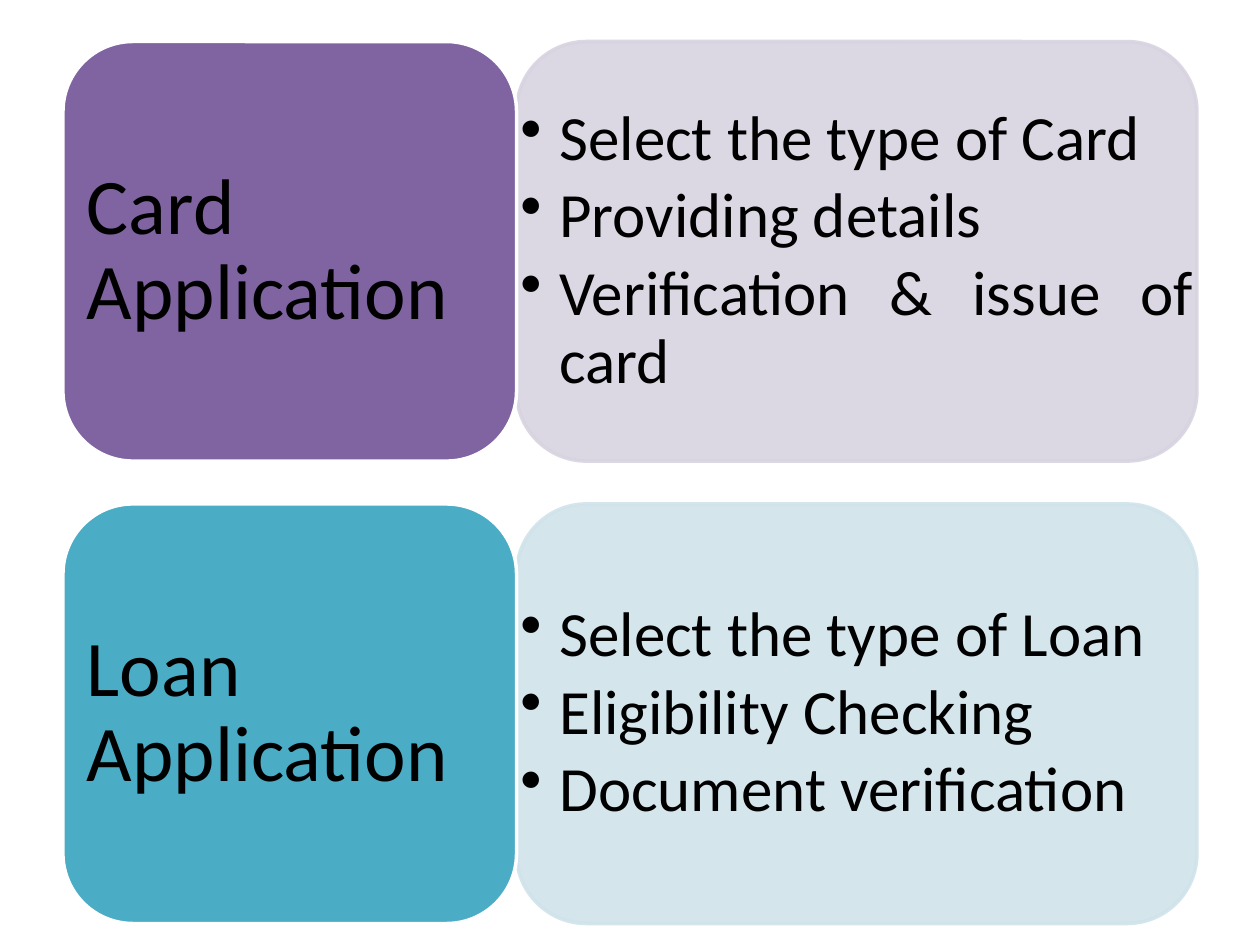
import pptx
import pptx.util
from lxml import etree
from pptx.dml.color import RGBColor
from pptx.enum.shapes import MSO_SHAPE
from pptx.enum.text import MSO_ANCHOR, PP_ALIGN
from pptx.oxml.ns import qn
from pptx.util import Inches

COLORS = {
    "text": "000000", "white": "FFFFFF",
    "card": "8064A2", "card_pale": "D8D3E0",
    "loan": "4BACC6", "loan_pale": "D0E3EA",
}
ROWS = [
    ("card", "Card Application",
     ["Select the type of Card", "Providing details", "Verification & issue of card"]),
    ("loan", "Loan Application",
     ["Select the type of Loan", "Eligibility Checking", "Document verification"]),
]
LEFT, TOP, ROW_H, ROW_STEP = 0.5, 0.33, 3.33, 3.67
TITLE_W, DETAIL_W = 3.6, 5.4
TITLE = {"size": 45, "after": 0.35, "insets": (0.19, 0.09), "bullet": False}
DETAIL = {"size": 36, "after": 0.15, "insets": (0.03, 0.03), "bullet": True}


def rgb(name):
    return RGBColor.from_string(COLORS[name])


def set_alpha(fill_parent, percent):
    for clr in fill_parent.iter(qn("a:srgbClr")):
        etree.SubElement(clr, qn("a:alpha"), val=str(percent * 1000))


def add_panel(s, kind, box, fill, line, alpha=None):
    sp = s.shapes.add_shape(kind, *map(Inches, box))
    sp.shadow.inherit = False
    sp.fill.solid()
    sp.fill.fore_color.rgb = rgb(fill)
    sp.line.color.rgb = rgb(line)
    sp.line.width = pptx.util.Pt(2)
    if alpha:
        set_alpha(sp.element.spPr, alpha)


def add_bullet(p):
    p.level = 1
    pPr = p._p.get_or_add_pPr()
    pPr.set("marL", str(Inches(0.31)))
    pPr.set("indent", str(-Inches(0.31)))
    etree.SubElement(pPr, qn("a:buChar"), char="•")


def add_text(s, box, lines, style):
    tf = s.shapes.add_textbox(*map(Inches, box)).text_frame
    side, edge = map(Inches, style["insets"])
    frame = {"word_wrap": True, "vertical_anchor": MSO_ANCHOR.MIDDLE,
             "margin_left": side, "margin_right": side,
             "margin_top": edge, "margin_bottom": edge}
    para = {"alignment": PP_ALIGN.JUSTIFY, "line_spacing": 0.9,
            "space_after": pptx.util.Pt(style["size"] * style["after"])}
    font = {"name": "Calibri", "size": pptx.util.Pt(style["size"])}
    for key, value in frame.items():
        setattr(tf, key, value)
    for i, line in enumerate(lines):
        p = tf.add_paragraph() if i else tf.paragraphs[0]
        for key, value in para.items():
            setattr(p, key, value)
        if style["bullet"]:
            add_bullet(p)
        r = p.add_run()
        r.text = line
        for key, value in font.items():
            setattr(r.font, key, value)
        r.font.color.rgb = rgb("text")


def add_row(s, top, color, title, details):
    title_box = (LEFT, top, TITLE_W, ROW_H)
    detail_box = (LEFT + TITLE_W, top, DETAIL_W, ROW_H)
    pale = color + "_pale"
    add_panel(s, MSO_SHAPE.FLOWCHART_ALTERNATE_PROCESS, detail_box, pale, pale, alpha=90)
    add_text(s, detail_box, details, DETAIL)
    add_panel(s, MSO_SHAPE.ROUNDED_RECTANGLE, title_box, color, "white")
    add_text(s, title_box, [title], TITLE)


def main():
    prs = pptx.Presentation()
    prs.slide_width, prs.slide_height = Inches(10), Inches(7.5)
    s = prs.slides.add_slide(prs.slide_layouts[6])
    for i, row in enumerate(ROWS):
        add_row(s, TOP + i * ROW_STEP, *row)
    prs.save("out.pptx")


if __name__ == "__main__":
    main()
